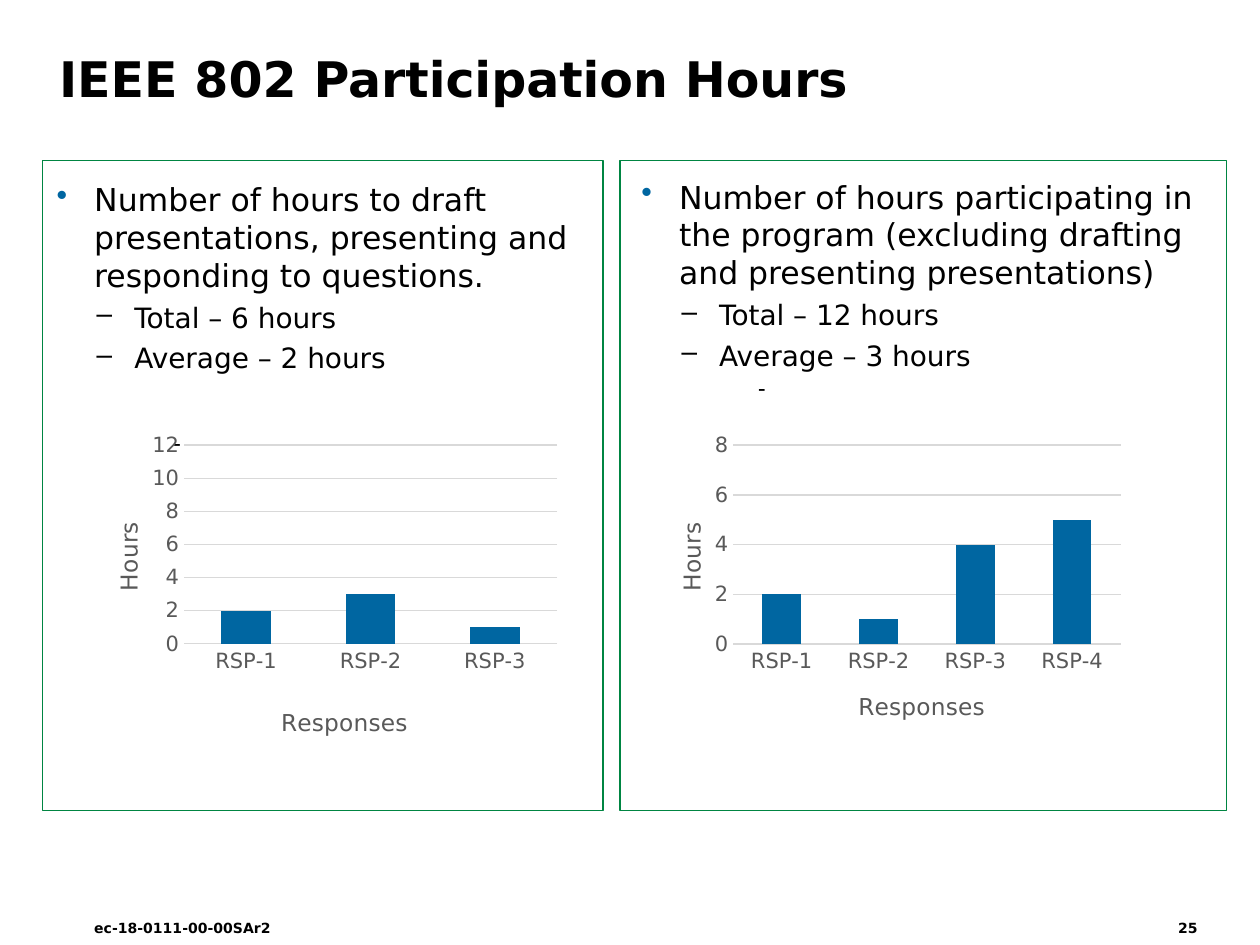
"""Build the participation hours slide with two framed bar charts."""
from lxml.etree import SubElement
from pptx import Presentation
from pptx.chart.data import CategoryChartData as Data
from pptx.dml.color import RGBColor as Rgb
from pptx.enum.chart import XL_CHART_TYPE as Kind, XL_TICK_MARK as Tick
from pptx.enum.shapes import MSO_SHAPE as Shape
from pptx.enum.text import MSO_ANCHOR as Anchor, MSO_AUTO_SIZE as Auto, PP_ALIGN as Align
from pptx.oxml import parse_xml
from pptx.oxml.ns import nsdecls, qn
from pptx.util import Cm, Pt

FONT = "DejaVu Sans"
COLORS = {"black": "000000", "blue": "0066A1", "green": "008542", "gray": "595959", "grid": "D9D9D9"}


def style(font, size, color="black", bold=False):
    font.name, font.size, font.bold = FONT, Pt(size), bold
    font.color.rgb = Rgb.from_string(COLORS[color])


def place(node, spot, index):
    for old in node.findall(qn("c:layout")):
        node.remove(old)
    layout = parse_xml(f"<c:layout {nsdecls('c')}><c:manualLayout/></c:layout>")
    manual = layout[0]
    if len(spot) == 4:
        SubElement(manual, qn("c:layoutTarget"), val="inner")
    for key in ("xMode", "yMode"):
        SubElement(manual, qn(f"c:{key}"), val="edge")
    for key, value in zip("xywh", spot):
        SubElement(manual, qn(f"c:{key}"), val=str(value))
    node.insert(index, layout)


deck = Presentation()
deck.slide_width, deck.slide_height = Cm(25.4), Cm(19.05)
slide = deck.slides.add_slide(deck.slide_layouts[5])
shapes = slide.shapes

title = shapes.title
title.left, title.top, title.width, title.height = Cm(1.19), Cm(0.03), Cm(22.43), Cm(2.13)
frame = title.text_frame
frame.text = "IEEE 802 Participation Hours"
frame.auto_size, frame.vertical_anchor = Auto.NONE, Anchor.BOTTOM
frame.margin_left = frame.margin_right = frame.margin_top = frame.margin_bottom = 0
frame.paragraphs[0].alignment = Align.LEFT
style(frame.paragraphs[0].runs[0].font, 28, bold=True)

panels = [
    {
        "rect": (0.86, 11.3), "box": (1.14, 3.63, 10.72, 12.22), "chart": 1.57,
        "lines": ["Number of hours to draft presentations, presenting and responding to questions.",
                  "Total – 6 hours", "Average – 2 hours", " "],
        "gap": 34, "hours": [2, 3, 1], "max": 12,
        "plot": (0.217, 0.057, 0.763, 0.629), "names": [(0.407, 0.87), (0.062, 0.287)],
    },
    {
        "rect": (12.5, 12.22), "box": (12.93, 3.58, 11.79, 12.6), "chart": 12.93,
        "lines": ["Number of hours participating in the program (excluding drafting and presenting presentations)",
                  "Total – 12 hours", "Average – 3 hours", " "],
        "gap": 4, "hours": [2, 1, 4, 5], "max": 8,
        "plot": (0.188, 0.057, 0.792, 0.629), "names": [(0.435, 0.82), (0.061, 0.287)],
    },
]
# level, size, indent, hang, bullet, bullet colour
levels = [(0, 18, 0.76, 0.76, "•", "blue"), (1, 16, 1.57, 0.76, "–", "black"),
          (1, 16, 1.57, 0.76, "–", "black"), (3, 12, 2.84, 0.48, "-", "black")]

for panel in panels:
    frame = shapes.add_textbox(*map(Cm, panel["box"])).text_frame
    frame.word_wrap = True
    frame.margin_left = frame.margin_right = frame.margin_top = frame.margin_bottom = 0
    frame.text = "\n".join(panel["lines"])
    gaps = [0, 4, 4, panel["gap"]]
    for para, gap, (level, size, indent, hang, mark, color) in zip(frame.paragraphs, gaps, levels):
        props = para._p.get_or_add_pPr()
        props.set("marL", str(Cm(indent)))
        props.set("indent", str(-Cm(hang)))
        SubElement(SubElement(props, qn("a:buClr")), qn("a:srgbClr"), val=COLORS[color])
        SubElement(props, qn("a:buChar"), char=mark)
        para.level, para.space_before = level, Pt(gap)
        style(para.runs[0].font, size)

    data = Data()
    data.categories = [f"RSP-{i}" for i in range(1, len(panel["hours"]) + 1)]
    data.add_series("Series 1", panel["hours"])
    area = (panel["chart"], 8.61, 9.86, 6.38)
    chart = shapes.add_chart(Kind.COLUMN_CLUSTERED, *map(Cm, area), data).chart
    chart.has_legend = chart.has_title = False
    style(chart.font, 10)
    plot = chart.plots[0]
    plot.gap_width, plot.vary_by_categories = 150, False
    fill = plot.series[0].format.fill
    fill.solid()
    fill.fore_color.rgb = Rgb.from_string(COLORS["blue"])
    place(chart._chartSpace.chart.plotArea, panel["plot"], 0)

    axes = (chart.category_axis, chart.value_axis)
    for axis, name, spot in zip(axes, ("Responses", "Hours"), panel["names"]):
        axis.major_tick_mark = axis.minor_tick_mark = Tick.NONE
        axis.format.line.fill.background()
        style(axis.tick_labels.font, 12, "gray")
        label = axis.axis_title.text_frame
        label.text = name
        style(label.paragraphs[0].runs[0].font, 13.3, "gray")
        place(axis.axis_title._element, spot, 1)
    label._txBody.bodyPr.set("rot", "-5400000")
    label._txBody.bodyPr.set("vert", "horz")
    axis.minimum_scale, axis.maximum_scale, axis.major_unit = 0, panel["max"], 2
    axis.has_major_gridlines = True
    line = axis.major_gridlines.format.line
    line.width, line.color.rgb = Pt(0.75), Rgb.from_string(COLORS["grid"])

for left, width in (panel["rect"] for panel in panels):
    rect = shapes.add_shape(Shape.RECTANGLE, Cm(left), Cm(3.23), Cm(width), Cm(13.11))
    rect.shadow.inherit = False
    rect.fill.background()
    rect.line.width, rect.line.color.rgb = Pt(0.75), Rgb.from_string(COLORS["green"])

for text, left, width, inset in (("25", 23.5, 1.22, 0.25), ("ec-18-0111-00-00SAr2", 1.9, 13.34, 0)):
    frame = shapes.add_textbox(Cm(left), Cm(18.42), Cm(width), Cm(0.64)).text_frame
    frame.word_wrap, frame.margin_left = True, Cm(inset)
    frame.text = text
    style(frame.paragraphs[0].runs[0].font, 8, bold=True)

deck.save("out.pptx")
